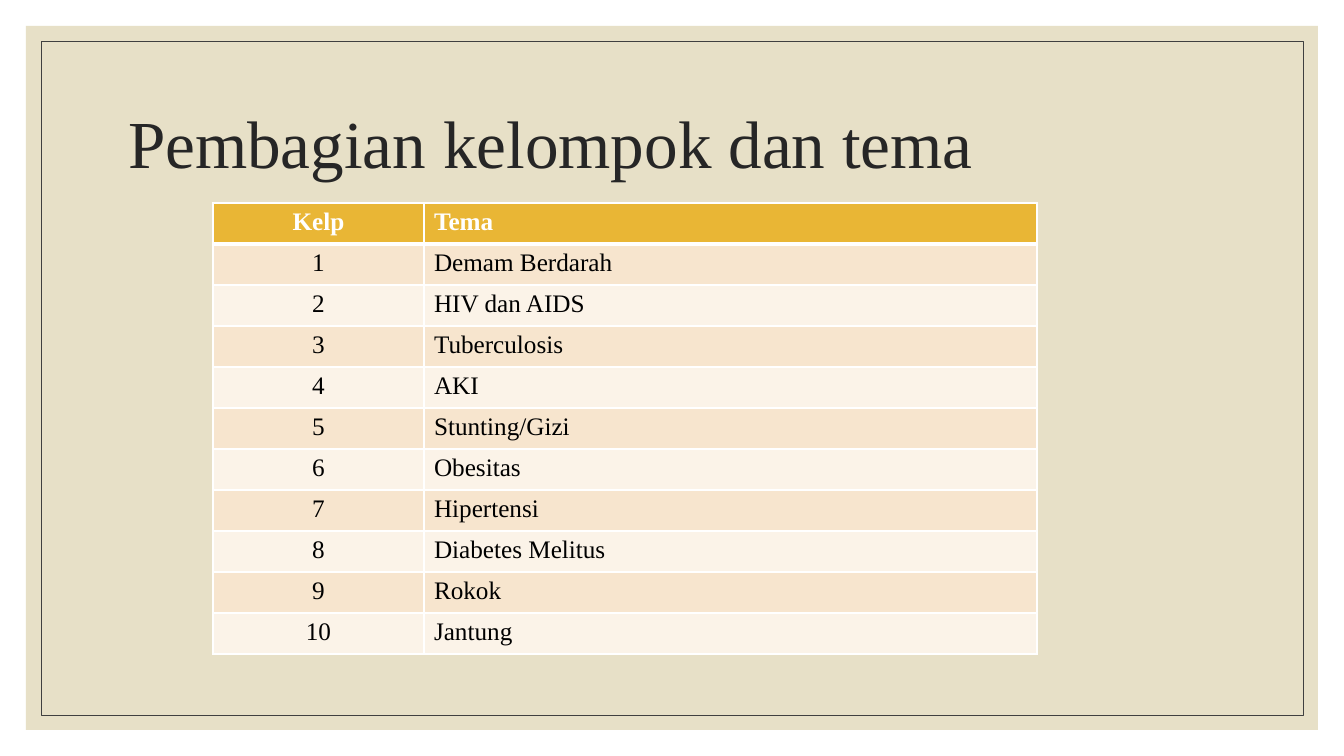
"""Build a slide that lists the groups and their themes."""
from lxml.etree import SubElement as Sub
from pptx import Presentation
from pptx.dml.color import RGBColor
from pptx.enum.shapes import MSO_SHAPE as Shape
from pptx.enum.text import MSO_ANCHOR as Anchor, MSO_AUTO_SIZE as Auto, PP_ALIGN as Align
from pptx.oxml.ns import qn
from pptx.util import Emu, Pt

SCALE = 914400 / 100.8
FONT = "Times New Roman"
SAND = RGBColor(0xE7, 0xE0, 0xC7)
GREY = RGBColor(0x40, 0x40, 0x40)
INK = RGBColor(0x26, 0x26, 0x26)
BLACK = RGBColor(0, 0, 0)
WHITE = RGBColor(0xFF, 0xFF, 0xFF)
GOLD = RGBColor(0xE9, 0xB6, 0x35)
PEACH = RGBColor(0xF7, 0xE5, 0xCE)
CREAM = RGBColor(0xFB, 0xF3, 0xE8)

HEAD = ("Kelp", "Tema")
THEMES = ("Demam Berdarah", "HIV dan AIDS", "Tuberculosis", "AKI", "Stunting/Gizi",
          "Obesitas", "Hipertensi", "Diabetes Melitus", "Rokok", "Jantung")


def px(num):
    return Emu(round(num * SCALE))


def write(para, text, size, color, bold=False):
    run = para.add_run()
    run.text = text
    font = run.font
    font.name, font.size, font.bold = FONT, Pt(size), bold
    font.color.rgb = color


def add_rect(slide, box):
    rect = slide.shapes.add_shape(Shape.RECTANGLE, *map(px, box))
    rect.shadow.inherit = False
    return rect


def add_back(slide, box):
    left, top, width, height = box
    panel = add_rect(slide, box)
    panel.fill.solid()
    panel.fill.fore_color.rgb = SAND
    panel.line.fill.background()
    gap = 15
    frame = add_rect(slide, (left + gap, top + gap, width - 2 * gap, height - 2 * gap))
    frame.fill.background()
    frame.line.color.rgb = GREY
    frame.line.width = Pt(0.5)


def add_title(slide, box, text):
    title = slide.shapes.title
    slide.shapes.element.append(title.element)
    title.left, title.top, title.width, title.height = map(px, box)
    frame = title.text_frame
    frame.word_wrap = True
    frame.auto_size = Auto.NONE
    frame.vertical_anchor = Anchor.MIDDLE
    para = frame.paragraphs[0]
    para.alignment = Align.LEFT
    para.line_spacing = 0.9
    write(para, text, 48, INK)


def set_edges(cell, row):
    props = cell._tc.get_or_add_tcPr()
    widths = {"L": 1, "R": 1, "T": 3 if row == 1 else 1, "B": 3 if row == 0 else 1}
    for side, width in widths.items():
        line = Sub(props, qn("a:ln" + side), w=str(Pt(width)))
        fill = Sub(line, qn("a:solidFill"))
        Sub(fill, qn("a:srgbClr"), val=str(WHITE))


def add_grid(slide, box, split):
    left, top, width, height = box
    rows = [HEAD] + [(str(num), theme) for num, theme in enumerate(THEMES, 1)]
    table = slide.shapes.add_table(len(rows), len(HEAD), *map(px, box)).table
    table.columns[0].width = px(split)
    table.columns[1].width = px(width - split)
    for row, texts in enumerate(rows):
        table.rows[row].height = px(height // len(rows))
        head = row == 0
        shade = GOLD if head else PEACH if row % 2 else CREAM
        for col, text in enumerate(texts):
            cell = table.cell(row, col)
            set_edges(cell, row)
            cell.fill.solid()
            cell.fill.fore_color.rgb = shade
            para = cell.text_frame.paragraphs[0]
            para.alignment = Align.LEFT if col else Align.CENTER
            write(para, text, 18, WHITE if head else BLACK, head)


def main():
    deck = Presentation()
    deck.slide_width, deck.slide_height = px(1344), px(756)
    slide = deck.slides.add_slide(deck.slide_layouts[5])
    slide.background.fill.solid()
    slide.background.fill.fore_color.rgb = WHITE
    add_back(slide, (26, 26, 1292, 704))
    add_title(slide, (118, 71, 1109, 151), "Pembagian kelompok dan tema")
    add_grid(slide, (213, 203, 824, 451), 211)
    deck.save("out.pptx")


if __name__ == "__main__":
    main()
